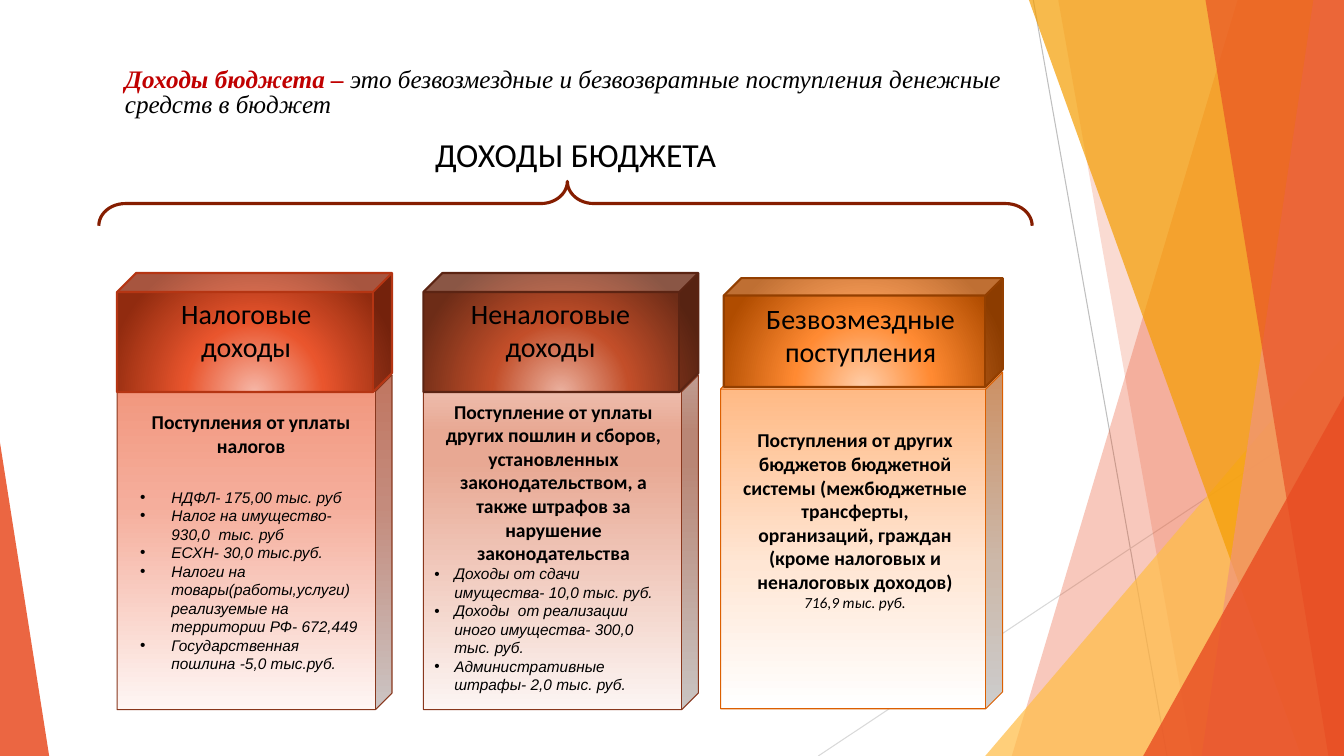
from pptx import Presentation
from pptx import util as u
from pptx.dml.color import RGBColor
from pptx.enum import shapes, text
from pptx.oxml import parse_xml
from pptx.oxml.ns import nsdecls, qn

Cm, Pt = u.Cm, u.Pt
SHAPE = shapes.MSO_SHAPE
CENTER, LEFT = text.PP_ALIGN.CENTER, text.PP_ALIGN.LEFT
W, H = 33.87, 19.05


class Theme:
    ink, accent, brace = "000000", "C00000", "851D00"
    red, amber, gold, salmon = "E84C22", "F49D00", "FFBD47", "F1947A"
    rule_dark, rule_light = "BFBFBF", "D9D9D9"
    heading = dict(name="Calibri", size=Pt(24))
    lead = dict(name="Times New Roman", size=Pt(18), italic=True)
    caption = dict(name="Calibri", size=Pt(20))
    summary = dict(name="Calibri", size=Pt(14), bold=True)
    item = dict(name="Arial", size=Pt(11), italic=True)
    total = dict(name="Calibri", size=Pt(11), italic=True)


def apply(obj, values):
    for name, value in values.items():
        setattr(obj, name, value)


def cm(box):
    return [Cm(v) for v in box]


def add_run(p, words, style, color=Theme.ink):
    r = p.add_run()
    r.text = words
    apply(r.font, style)
    r.font.color.rgb = RGBColor.from_string(color)


def add_text(s, box):
    tf = s.shapes.add_textbox(*cm(box)).text_frame
    tf.word_wrap = True
    return tf


def indent(p, margin, first=0, bullet=None):
    pPr = p._p.get_or_add_pPr()
    pPr.set("marL", str(Cm(margin)))
    pPr.set("indent", str(Cm(first)))
    if bullet:
        pPr.append(parse_xml(f'<a:buFont {nsdecls("a")} typeface="Arial"/>'))
        pPr.append(parse_xml(f'<a:buChar {nsdecls("a")} char="{bullet}"/>'))


def tint(sp, color, opacity):
    sp.shadow.inherit = False
    sp.line.fill.background()
    sp.fill.solid()
    sp.fill.fore_color.rgb = RGBColor.from_string(color)
    clr = sp._element.spPr.find(".//" + qn("a:srgbClr"))
    clr.append(parse_xml(f'<a:alpha {nsdecls("a")} val="{opacity * 1000}"/>'))


def rule(s, ends, color):
    c = s.shapes.add_connector(shapes.MSO_CONNECTOR.STRAIGHT, *cm(ends))
    c.line.color.rgb = RGBColor.from_string(color)
    c.line.width = Pt(0.75)
    c._element.spPr.append(parse_xml(f'<a:effectLst {nsdecls("a")}/>'))


def facet(s, top, bottom, color, opacity):
    points = [cm(pt) for pt in ((top, 0), (W, 0), (W, H), (bottom, H))]
    builder = s.shapes.build_freeform(*points[0], scale=1.0)
    builder.add_line_segments(points[1:], close=True)
    tint(builder.convert_to_shape(), color, opacity)


def corner(s, left, width, height, apex, color, opacity):
    sp = s.shapes.add_shape(SHAPE.ISOSCELES_TRIANGLE, *cm((left, H - height, width, height)))
    sp.adjustments[0] = apex
    tint(sp, color, opacity)


def backdrop(s):
    rule(s, (26.04, 0, 29.41, H), Theme.rule_dark)
    rule(s, (W, 10.24, 20.62, H), Theme.rule_light)
    facet(s, 31.19, 25.5, Theme.red, 30)
    facet(s, 26.67, 30.05, Theme.red, 20)
    corner(s, W - 9.04, 9.04, 10.59, 1, Theme.gold, 72)
    facet(s, 25.93, 32.79, Theme.amber, 70)
    facet(s, 33.1, 30.28, Theme.salmon, 70)
    facet(s, 30.38, 33.48, Theme.red, 65)
    corner(s, W - 5.06, 5.06, 9.07, 1, Theme.red, 80)
    corner(s, 0, 1.24, 7.9, 0, Theme.red, 85)


def heading(s, box):
    x, y, w, h = box
    p = add_text(s, (x, y, w, 1.5)).paragraphs[0]
    p.line_spacing = 0.8
    indent(p, 1.27)
    add_run(p, "Доходы бюджета – ", {**Theme.lead, "bold": True}, Theme.accent)
    add_run(p, "это безвозмездные и безвозвратные поступления денежные средств в бюджет", Theme.lead)

    title = s.shapes.title
    apply(title, dict(left=Cm(x + 7.21), top=Cm(y + 1.47), width=Cm(10.06), height=Cm(1.45)))
    tf = title.text_frame
    apply(tf, dict(auto_size=text.MSO_AUTO_SIZE.NONE, word_wrap=True,
                   vertical_anchor=text.MSO_ANCHOR.TOP))
    p = tf.paragraphs[0]
    apply(p, dict(alignment=CENTER, line_spacing=1.15))
    indent(p, 1.27)
    add_run(p, "ДОХОДЫ БЮДЖЕТА", Theme.heading)

    span, depth = 23.52, 1.12
    mid_x, mid_y = x + 12.62, y + h - depth / 2
    sp = s.shapes.add_shape(SHAPE.LEFT_BRACE,
                            *cm((mid_x - depth / 2, mid_y - span / 2, depth, span)))
    sp.rotation = 90
    sp.adjustments[0], sp.adjustments[1] = 0.596, 0.498
    sp.shadow.inherit = False
    sp.fill.background()
    sp.line.color.rgb = RGBColor.from_string(Theme.brace)
    sp.line.width = Pt(2.25)


def cube(s, box, depth, stops, direction, line, weight):
    sp = s.shapes.add_shape(SHAPE.CUBE, *cm(box))
    sp.adjustments[0] = depth
    sp.shadow.inherit = False
    sp.line.color.rgb = RGBColor.from_string(line)
    sp.line.width = Pt(weight)
    sp.fill.background()
    spPr = sp._element.spPr
    gs = "".join(f'<a:gs pos="{pos * 1000}"><a:srgbClr val="{color}"/></a:gs>' for pos, color in stops)
    grad = parse_xml(f'<a:gradFill {nsdecls("a")} rotWithShape="1"><a:gsLst>{gs}</a:gsLst>{direction}</a:gradFill>')
    spPr.replace(spPr.find(qn("a:noFill")), grad)


def column(s, box, head, body, caption, notes):
    x, y, w, h = box
    inset = head["inset"]
    cube(s, (x, y + h - body["height"], w, body["height"]), 0.06, body["stops"],
         '<a:lin ang="16200000" scaled="0"/>', body["line"], 0.75)
    cube(s, (x + inset, y, w - inset, head["height"]), 0.16, head["stops"],
         '<a:path path="circle"><a:fillToRect l="50000" t="130000" r="50000" b="-30000"/></a:path>',
         head["line"], 1.5)

    dx, width, words = caption
    p = add_text(s, (x + dx, y + 0.46, width, 1.96)).paragraphs[0]
    p.alignment = CENTER
    add_run(p, words, Theme.caption)

    dx, dy, width, height = notes["box"]
    tf = add_text(s, (x + dx, y + dy, width, height))
    p = tf.paragraphs[0]
    apply(p, dict(alignment=CENTER, space_after=Pt(notes["gap"])))
    add_run(p, notes["summary"], Theme.summary)
    hang = notes["hang"]
    for words in notes["items"]:
        p = tf.add_paragraph()
        p.alignment = LEFT if hang else CENTER
        if hang:
            indent(p, hang, -hang, "•")
        add_run(p, words, Theme.item if hang else Theme.total)


COLUMNS = [
    dict(box=(2.95, 6.88, 6.93, 11),
         head=dict(inset=0, height=3, line="B53513",
                   stops=[(0, "F6B7A7"), (46, "E9552D"), (100, "912B0F")]),
         body=dict(height=8.43, line="88371D",
                   stops=[(0, "FEF6F4"), (61, "F5AE9C"), (100, "F1947A")]),
         caption=(0.69, 5.13, "Налоговые доходы"),
         notes=dict(box=(0.33, 3.33, 6.1, 7.44), gap=22, hang=0.79,
                    summary="Поступления от уплаты налогов",
                    items=["НДФЛ- 175,00 тыс. руб", "Налог на имущество- 930,0  тыс. руб",
                           "ЕСХН- 30,0 тыс.руб.",
                           "Налоги на товары(работы,услуги) реализуемые на территории РФ- 672,449",
                           "Государственная пошлина -5,0 тыс.руб."])),
    dict(box=(10.67, 6.88, 6.93, 11),
         head=dict(inset=0, height=3, line="5B2413",
                   stops=[(0, "EBB19F"), (46, "C24E29"), (100, "6D2C17")]),
         body=dict(height=8.43, line="88371D",
                   stops=[(0, "FCF5F3"), (74, "E8A893"), (83, "E8A893"), (100, "F0C5B7")]),
         caption=(0.64, 5.13, "Неналоговые доходы"),
         notes=dict(box=(0.03, 3.07, 6.5, 8.43), gap=0, hang=0.5,
                    summary="Поступление от уплаты других пошлин и сборов, установленных "
                            "законодательством, а также штрафов за нарушение законодательства",
                    items=["Доходы от сдачи имущества- 10,0 тыс. руб.",
                           "Доходы  от реализации иного имущества- 300,0 тыс. руб.",
                           "Административные штрафы- 2,0 тыс. руб."])),
    dict(box=(18.16, 7.01, 7.11, 10.85),
         head=dict(inset=0.08, height=2.74, line="933F00",
                   stops=[(0, "FFCEA9"), (46, "FF8A32"), (100, "B04C00")]),
         body=dict(height=8.48, line="DC5F00",
                   stops=[(0, "FFFFFF"), (43, "FFE6D4"), (100, "FFB57D")]),
         caption=(0.81, 5.44, "Безвозмездные поступления"),
         notes=dict(box=(0.28, 3.66, 6.22, 5.51), gap=0, hang=0,
                    summary="Поступления от других бюджетов бюджетной системы (межбюджетные "
                            "трансферты, организаций, граждан (кроме налоговых и неналоговых доходов)",
                    items=["716,9 тыс. руб."])),
]


def main():
    prs = Presentation()
    prs.slide_width, prs.slide_height = Cm(W), Cm(H)
    s = prs.slides.add_slide(prs.slide_layouts[5])
    backdrop(s)
    heading(s, (1.63, 1.63, 25.25, 4.06))
    for parts in COLUMNS:
        column(s, **parts)
    prs.save("out.pptx")


if __name__ == "__main__":
    main()
